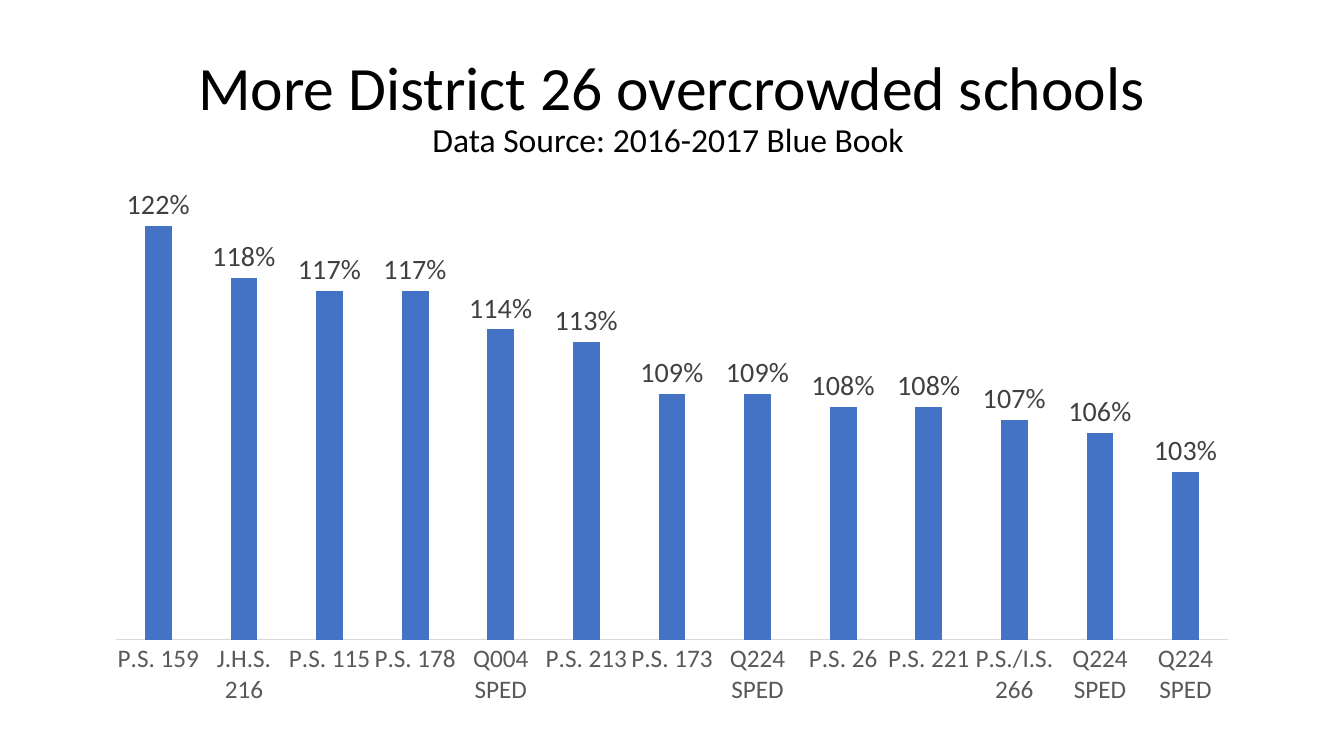
from pptx import Presentation
from pptx.chart.data import CategoryChartData
from pptx.dml.color import RGBColor
from pptx.enum.chart import XL_CHART_TYPE as ChartType
from pptx.enum.chart import XL_LABEL_POSITION as LabelPosition
from pptx.enum.chart import XL_TICK_MARK as TickMark
from pptx.enum.text import MSO_ANCHOR as Anchor
from pptx.enum.text import PP_ALIGN as Align
from pptx.util import Pt

COLORS = {
    "title": "000000",
    "bar": "4472C4",
    "value": "404040",
    "school": "595959",
    "baseline": "D9D9D9",
}

UTILIZATION = [
    ("P.S. 159", 1.22),
    ("J.H.S. 216", 1.18),
    ("P.S. 115", 1.17),
    ("P.S. 178", 1.17),
    ("Q004 SPED", 1.14),
    ("P.S. 213", 1.13),
    ("P.S. 173", 1.09),
    ("Q224 SPED", 1.09),
    ("P.S. 26", 1.08),
    ("P.S. 221", 1.08),
    ("P.S./I.S. 266", 1.07),
    ("Q224 SPED", 1.06),
    ("Q224 SPED", 1.03),
]


def rgb(name):
    return RGBColor.from_string(COLORS[name])


def set_font(font, size, color, family="Calibri"):
    font.name = family
    font.size = Pt(size)
    font.bold = False
    font.color.rgb = rgb(color)


def add_text(paragraph, text, **font_format):
    run = paragraph.add_run()
    run.text = text
    set_font(run.font, **font_format)


class SlideBuilder:
    """Holds the shared left edge and width, and the slide being filled."""

    def __init__(self, slide, left, width):
        self.slide = slide
        self.left = Pt(left)
        self.width = Pt(width)

    def title(self, heading, source, top, height):
        box = self.slide.shapes.add_textbox(self.left, Pt(top), self.width, Pt(height))
        frame = box.text_frame
        frame.word_wrap = True
        frame.vertical_anchor = Anchor.MIDDLE
        paragraph = frame.paragraphs[0]
        paragraph.alignment = Align.CENTER
        paragraph.line_spacing = 0.9
        add_text(paragraph, heading, size=44, color="title")
        paragraph.add_line_break()
        add_text(paragraph, source, size=24, color="title")

    def column_chart(self, rows, top, height):
        data = CategoryChartData(number_format="0%")
        data.categories = [school for school, _ in rows]
        data.add_series("Series 1", [share for _, share in rows])
        chart = self.slide.shapes.add_chart(
            ChartType.COLUMN_CLUSTERED, self.left, Pt(top), self.width, Pt(height), data
        ).chart
        chart.has_legend = False
        chart.has_title = False
        set_font(chart.font, 10, "title")
        self._axes(chart)
        self._columns(chart.plots[0])

    def _axes(self, chart):
        schools = chart.category_axis
        schools.major_tick_mark = TickMark.NONE
        schools.minor_tick_mark = TickMark.NONE
        schools.format.line.color.rgb = rgb("baseline")
        schools.format.line.width = Pt(0.75)
        set_font(schools.tick_labels.font, 18, "school")
        shares = chart.value_axis
        shares.minimum_scale = 0.9
        shares.maximum_scale = 1.25
        shares.has_major_gridlines = False
        shares.visible = False

    def _columns(self, plot):
        plot.gap_width = 219
        plot.overlap = -27
        plot.vary_by_categories = False
        utilization = plot.series[0]
        utilization.invert_if_negative = False
        utilization.format.fill.solid()
        utilization.format.fill.fore_color.rgb = rgb("bar")
        labels = utilization.data_labels
        labels.show_value = True
        labels.position = LabelPosition.OUTSIDE_END
        labels.number_format = "0%"
        labels.number_format_is_linked = False
        set_font(labels.font, 20, "value")


def main():
    deck = Presentation()
    deck.slide_width, deck.slide_height = Pt(960), Pt(540)
    blank = deck.slide_layouts[6]
    builder = SlideBuilder(deck.slides.add_slide(blank), left=66, width=828)
    builder.title(
        "More District 26 overcrowded schools",
        "Data Source: 2016-2017 Blue Book ",
        top=28.8,
        height=97.9,
    )
    builder.column_chart(UTILIZATION, top=126, height=385)
    deck.save("out.pptx")


if __name__ == "__main__":
    main()
